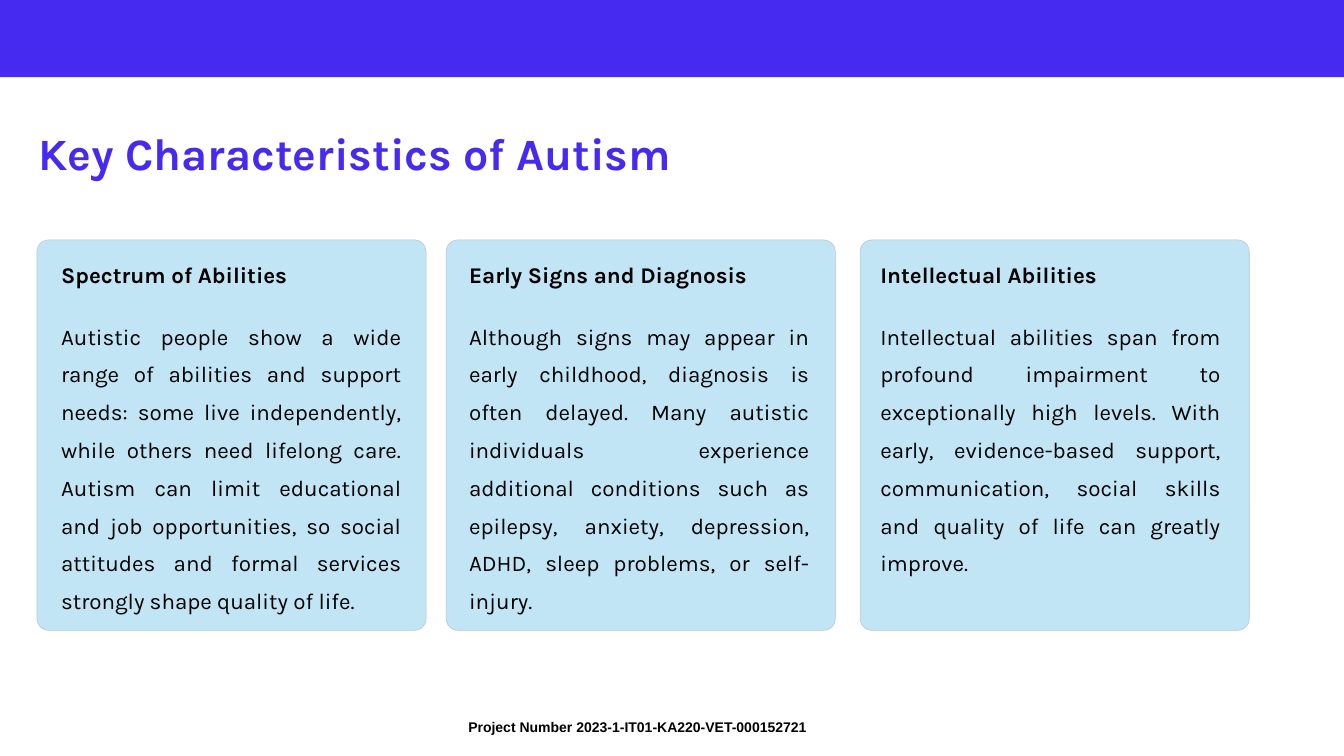
from pptx import Presentation
from pptx.dml.color import RGBColor
from pptx.enum import shapes, text
from pptx.util import Inches, Pt

VIOLET = RGBColor(0x46, 0x2A, 0xF0)
SKY = RGBColor(0xC1, 0xE5, 0xF5)
OUTLINE = RGBColor(0xBB, 0xC2, 0xDC)
BLACK = RGBColor(0, 0, 0)

TITLE = "Key Characteristics of Autism"
FOOTER = "Project Number 2023-1-IT01-KA220-VET-000152721"
CARDS = [
    (0.55, 0.91, "Spectrum of Abilities",
     "Autistic people show a wide range of abilities and support needs: some live "
     "independently, while others need lifelong care. Autism can limit educational and "
     "job opportunities, so social attitudes and formal services strongly shape quality "
     "of life."),
    (6.64, 6.98, "Early Signs and Diagnosis",
     "Although signs may appear in early childhood, diagnosis is often delayed. Many "
     "autistic individuals experience additional conditions such as epilepsy, anxiety, "
     "depression, ADHD, sleep problems, or self-injury."),
    (12.8, 13.1, "Intellectual Abilities",
     "Intellectual abilities span from profound impairment to exceptionally high levels. "
     "With early, evidence-based support, communication, social skills and quality of "
     "life can greatly improve."),
]
CARD_TOP, CARD_WIDTH, CARD_HEIGHT = 3.57, 5.79, 5.81
TEXT_WIDTH = 5.06
HEADING_TOP, HEADING_HEIGHT = 3.7, 0.5
BODY_TOP, BODY_HEIGHT = 4.64, 3.91


def add_panel(page, kind, area, fill):
    panel = page.shapes.add_shape(kind, *map(Inches, area))
    panel.shadow.inherit = False
    panel.fill.solid()
    panel.fill.fore_color.rgb = fill
    panel.line.fill.background()
    return panel


def style(para, font_name, size, color, bold):
    para.font.name = font_name
    para.font.size = Pt(size)
    para.font.color.rgb = color
    para.font.bold = bold


def add_card_text(page, area, words, spacing, bold):
    box = page.shapes.add_textbox(*map(Inches, area))
    frame = box.text_frame
    frame.word_wrap = True
    frame.margin_left = frame.margin_right = frame.margin_top = frame.margin_bottom = 0
    para = frame.paragraphs[0]
    para.text = words
    para.alignment = text.PP_ALIGN.JUSTIFY
    para.line_spacing = Pt(spacing)
    style(para, "Karla", 24, BLACK, bold)


def add_title(page):
    title = page.shapes.title
    title.left, title.top, title.width, title.height = map(Inches, (0.47, 1.52, 17.25, 1.61))
    frame = title.text_frame
    frame.text = TITLE
    frame.vertical_anchor = text.MSO_ANCHOR.MIDDLE
    frame.auto_size = text.MSO_AUTO_SIZE.NONE
    para = frame.paragraphs[0]
    para.alignment = text.PP_ALIGN.LEFT
    para.line_spacing = 0.9
    style(para, "Karla", 48, VIOLET, True)


def add_footer(page):
    box = page.shapes.add_textbox(*map(Inches, (6.87, 10.65, 5.31, 0.35)))
    box.text_frame.word_wrap = False
    box.text_frame.auto_size = text.MSO_AUTO_SIZE.SHAPE_TO_FIT_TEXT
    para = box.text_frame.paragraphs[0]
    para.text = FOOTER
    style(para, "Arial", 15, BLACK, True)


def main():
    deck = Presentation()
    deck.slide_width, deck.slide_height = Inches(20), Inches(11.25)
    page = deck.slides.add_slide(deck.slide_layouts[5])
    add_footer(page)
    add_panel(page, shapes.MSO_SHAPE.RECTANGLE, (0, -0.02, 20, 1.17), VIOLET)
    add_title(page)
    for card_left, text_left, heading, body in CARDS:
        card = add_panel(page, shapes.MSO_SHAPE.ROUNDED_RECTANGLE,
                         (card_left, CARD_TOP, CARD_WIDTH, CARD_HEIGHT), SKY)
        card.adjustments[0] = 0.03
        card.line.color.rgb = OUTLINE
        card.line.width = Pt(0.6)
        add_card_text(page, (text_left, HEADING_TOP, TEXT_WIDTH, HEADING_HEIGHT),
                      heading, 42, True)
        add_card_text(page, (text_left, BODY_TOP, TEXT_WIDTH, BODY_HEIGHT),
                      body, 40.5, False)
    deck.save("out.pptx")


if __name__ == "__main__":
    main()
